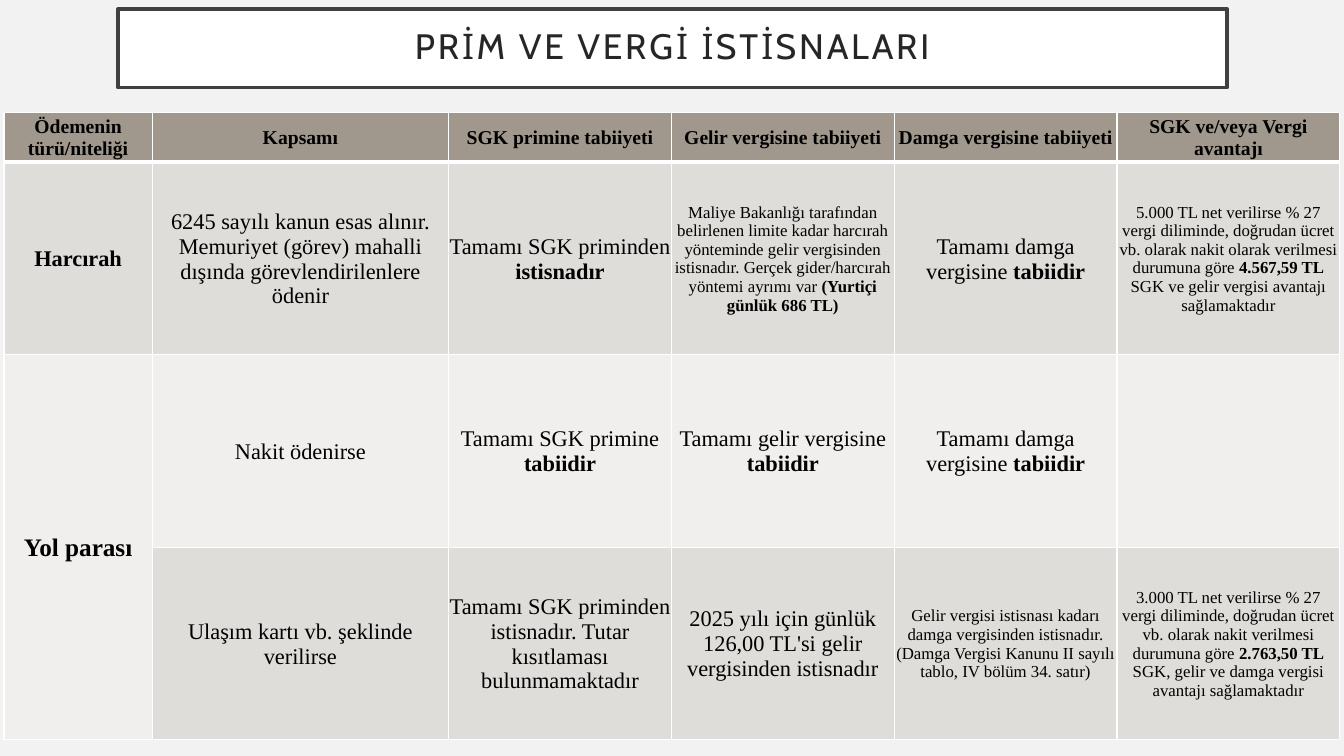
from dataclasses import dataclass

from lxml.etree import SubElement as Sub
from pptx import Presentation
from pptx.dml.color import RGBColor as Rgb
from pptx.enum.text import MSO_ANCHOR as Anchor, MSO_AUTO_SIZE as Fit, PP_ALIGN as Align
from pptx.oxml.ns import qn
from pptx.util import Inches, Pt

TITLE = "PRİM VE VERGİ İSTİSNALARI"
HEAD = ["Ödemenin türü/niteliği", "Kapsamı", "SGK primine tabiiyeti",
        "Gelir vergisine tabiiyeti", "Damga vergisine tabiiyeti",
        "SGK ve/veya Vergi avantajı"]
BODY = [
    [("*Harcırah*", "mid"),
     ("6245 sayılı kanun esas alınır. Memuriyet (görev) mahalli dışında "
      "görevlendirilenlere ödenir", "mid"),
     ("Tamamı SGK priminden *istisnadır*", "mid"),
     ("Maliye Bakanlığı tarafından belirlenen limite kadar harcırah yönteminde "
      "gelir vergisinden istisnadır. Gerçek gider/harcırah yöntemi ayrımı var "
      "*(Yurtiçi günlük 686 TL)*", "small"),
     ("Tamamı damga vergisine *tabiidir*", "mid"),
     ("5.000 TL net verilirse % 27 vergi diliminde, doğrudan ücret vb. olarak "
      "nakit olarak verilmesi durumuna göre *4.567,59 TL* SGK ve gelir vergisi "
      "avantajı sağlamaktadır", "small")],
    [("*Yol parası*", "large"),
     ("Nakit ödenirse", "mid"),
     ("Tamamı SGK primine *tabiidir*", "mid"),
     ("Tamamı gelir vergisine *tabiidir*", "mid"),
     ("Tamamı damga vergisine *tabiidir*", "mid"),
     ("", "mid")],
    [("", "mid"),
     ("Ulaşım kartı vb. şeklinde verilirse", "mid"),
     ("Tamamı SGK priminden istisnadır. Tutar kısıtlaması bulunmamaktadır", "mid"),
     ("2025 yılı için günlük 126,00 TL'si gelir vergisinden istisnadır", "mid"),
     ("Gelir vergisi istisnası kadarı damga vergisinden istisnadır. "
      "(Damga Vergisi Kanunu II sayılı tablo, IV bölüm 34. satır)", "small"),
     ("3.000 TL net verilirse % 27 vergi diliminde, doğrudan ücret vb. olarak "
      "nakit verilmesi durumuna göre *2.763,50 TL* SGK, gelir ve damga vergisi "
      "avantajı sağlamaktadır", "small")],
]
WIDTHS = [1.47, 2.94] + [2.21] * 4
HEIGHTS = [0.49] + [1.91] * 3


@dataclass(frozen=True)
class Theme:
    back: str = "F2F2F2"
    white: str = "FFFFFF"
    frame: str = "404040"
    title: str = "262626"
    ink: str = "000000"
    head: str = "A0988C"
    dark: str = "DFDDDA"
    light: str = "F0EFEE"
    sans: str = "Cabin"
    serif: str = "Times New Roman"
    top: float = 25.2
    large: float = 18
    mid: float = 16
    label: float = 14
    small: float = 12


T = Theme()


def paint(fill, color):
    fill.solid()
    fill.fore_color.rgb = Rgb.from_string(color)


def write(frame, text, size, font=T.serif, color=T.ink, track=0, lead=1.0):
    par = frame.paragraphs[0]
    par.alignment = Align.CENTER
    par.line_spacing = lead
    for i, part in enumerate(text.split("*")):
        if part:
            run = par.add_run()
            run.text = part
            run.font.name = font
            run.font.size = Pt(size)
            run.font.bold = i % 2 == 1
            run.font.color.rgb = Rgb.from_string(color)
            if track:
                run.font._element.set("spc", str(track * 100))


def edge(cell, row):
    props = cell._tc.get_or_add_tcPr()
    thick = {"T": row == 1, "B": row == 0}
    for side in "LRTB":
        width = Pt(3 if thick.get(side) else 1)
        line = Sub(props, qn("a:ln" + side), w=str(int(width)))
        Sub(Sub(line, qn("a:solidFill")), qn("a:srgbClr"), val=T.white)


def add_title(slide):
    box = slide.shapes.title
    box.left, box.top = Inches(1.17), Inches(0.09)
    box.width, box.height = Inches(11), Inches(0.78)
    paint(box.fill, T.white)
    paint(box.line.fill, T.frame)
    box.line.width = Pt(2.5)
    frame = box.text_frame
    frame.auto_size = Fit.NONE
    frame.word_wrap = True
    frame.vertical_anchor = Anchor.MIDDLE
    frame.margin_left = frame.margin_right = Inches(0.2)
    frame.margin_top = frame.margin_bottom = Inches(0.2)
    write(frame, TITLE, T.top, font=T.sans, color=T.title, track=2, lead=0.9)


def add_grid(slide):
    rows = [[(f"*{text}*", "label") for text in HEAD]] + BODY
    shape = slide.shapes.add_table(
        len(rows), len(HEAD), Inches(0.04), Inches(1.12),
        Inches(sum(WIDTHS)), Inches(sum(HEIGHTS)))
    grid = shape.table
    grid.first_row = grid.horz_banding = False
    for col, width in zip(grid.columns, WIDTHS):
        col.width = Inches(width)
    for row, height in zip(grid.rows, HEIGHTS):
        row.height = Inches(height)
    fills = [T.head, T.dark, T.light, T.dark]
    for r, row in enumerate(rows):
        for c, (text, size) in enumerate(row):
            cell = grid.cell(r, c)
            cell.margin_left = cell.margin_right = cell.margin_top = Inches(0.01)
            cell.margin_bottom = 0
            cell.vertical_anchor = Anchor.MIDDLE
            edge(cell, r)
            paint(cell.fill, fills[r])
            write(cell.text_frame, text, getattr(T, size))
    grid.cell(2, 0).merge(grid.cell(3, 0))


def main():
    deck = Presentation()
    deck.slide_width, deck.slide_height = Inches(13.33), Inches(7.5)
    slide = deck.slides.add_slide(deck.slide_layouts[5])
    paint(slide.background.fill, T.back)
    add_title(slide)
    add_grid(slide)
    deck.save("out.pptx")


if __name__ == "__main__":
    main()
